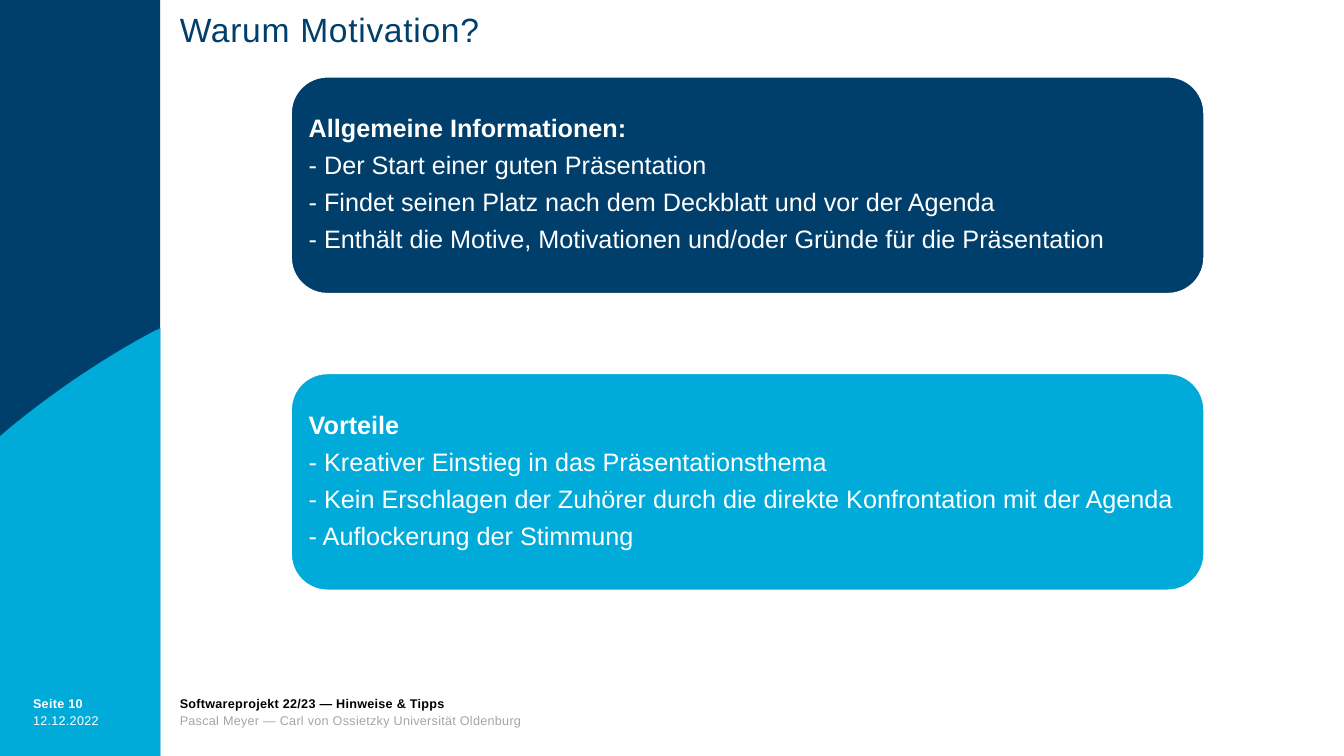
from pptx import Presentation
from pptx.dml.color import RGBColor
from pptx.enum.shapes import MSO_SHAPE
from pptx.enum.text import MSO_ANCHOR, PP_ALIGN
from pptx.util import Pt

RECTANGLE = MSO_SHAPE.RECTANGLE
ROUNDED = MSO_SHAPE.ROUNDED_RECTANGLE
TOP, MIDDLE = MSO_ANCHOR.TOP, MSO_ANCHOR.MIDDLE
LEFT = PP_ALIGN.LEFT

WIDTH, HEIGHT = 960, 540
SIDEBAR_WIDTH = 114.5
NAVY, CYAN, WHITE, BLACK, GREY = "003F6B", "00ABDA", "FFFFFF", "000000", "A5A5A5"

CARDS = [
    (54.9, NAVY, "Allgemeine Informationen:", [
        "- Der Start einer guten Präsentation",
        "- Findet seinen Platz nach dem Deckblatt und vor der Agenda",
        "- Enthält die Motive, Motivationen und/oder Gründe für die Präsentation",
    ]),
    (266.8, CYAN, "Vorteile", [
        "- Kreativer Einstieg in das Präsentationsthema",
        "- Kein Erschlagen der Zuhörer durch die direkte Konfrontation mit der Agenda",
        "- Auflockerung der Stimmung",
    ]),
]


def color(value):
    return RGBColor.from_string(value)


def style_shape(shape, fill, line=None):
    shape.shadow.inherit = False
    shape.fill.solid()
    shape.fill.fore_color.rgb = color(fill)
    if line:
        shape.line.color.rgb = color(line)
        shape.line.width = Pt(1)
    else:
        shape.line.fill.background()


def add_box(slide, kind, left, top, width, height, fill, line=None):
    shape = slide.shapes.add_shape(kind, Pt(left), Pt(top), Pt(width), Pt(height))
    style_shape(shape, fill, line)
    return shape


def set_frame(frame, inset=0, anchor=TOP, wrap=True):
    frame.margin_left = frame.margin_right = Pt(inset)
    frame.margin_top = frame.margin_bottom = Pt(inset)
    frame.vertical_anchor = anchor
    frame.word_wrap = wrap


def write(frame, text, size, fill, bold=False, line_spacing=0.9, after=0, tracking=0):
    """Add one paragraph, using the empty first one if there is no text yet."""
    paragraph = frame.add_paragraph() if frame.text else frame.paragraphs[0]
    paragraph.alignment = LEFT
    paragraph.line_spacing = line_spacing
    paragraph.space_after = Pt(after)
    run = paragraph.add_run()
    run.text = text
    run.font.name = "Arial"
    run.font.size = Pt(size)
    run.font.bold = bold
    run.font.color.rgb = color(fill)
    if tracking:
        run.font._element.set("spc", str(round(tracking * 100)))


def add_text_box(slide, left, top, width, height, wrap=True):
    box = slide.shapes.add_textbox(Pt(left), Pt(top), Pt(width), Pt(height))
    set_frame(box.text_frame, wrap=wrap)
    return box.text_frame


def cubic_points(start, control_1, control_2, end, steps=24):
    points = []
    for step in range(steps + 1):
        t = step / steps
        weights = ((1 - t) ** 3, 3 * t * (1 - t) ** 2, 3 * t ** 2 * (1 - t), t ** 3)
        points.append(tuple(
            sum(weight * value for weight, value in zip(weights, values))
            for values in zip(start, control_1, control_2, end)))
    return points


def add_sidebar(slide):
    add_box(slide, RECTANGLE, 0, 0, SIDEBAR_WIDTH, HEIGHT, NAVY)
    curve = cubic_points((6.5, 306), (38.2, 280.1), (72, 257), (108, 237.6))
    outline = [(SIDEBAR_WIDTH, HEIGHT), (0, HEIGHT), (0, 311.6), *curve]
    builder = slide.shapes.build_freeform(Pt(SIDEBAR_WIDTH), Pt(234.4))
    builder.add_line_segments([(Pt(x), Pt(y)) for x, y in outline])
    style_shape(builder.convert_to_shape(), CYAN)


def add_footer(slide):
    small = {"size": 9, "line_spacing": Pt(12), "tracking": 0.2}
    page = add_text_box(slide, 23.6, 496.1, 82, 29, wrap=False)
    write(page, "Seite 10", fill=WHITE, bold=True, **small)
    write(page, "12.12.2022", fill=WHITE, **small)
    source = add_text_box(slide, 128.4, 496.1, 677.5, 29, wrap=False)
    write(source, "Softwareprojekt 22/23 — Hinweise & Tipps", fill=BLACK, bold=True, **small)
    write(source, "Pascal Meyer — Carl von Ossietzky Universität Oldenburg", fill=GREY, **small)


def add_card(slide, top, fill, heading, points):
    frame = add_box(slide, ROUNDED, 208, top, 652, 154.8, fill, line=WHITE).text_frame
    set_frame(frame, inset=5, anchor=MIDDLE)
    write(frame, heading, 18, WHITE, bold=True, after=7)
    for point in points:
        write(frame, point, 18, WHITE, after=7)


def main():
    presentation = Presentation()
    presentation.slide_width = Pt(WIDTH)
    presentation.slide_height = Pt(HEIGHT)
    slide = presentation.slides.add_slide(presentation.slide_layouts[6])
    add_sidebar(slide)
    add_footer(slide)
    title = add_text_box(slide, 128.4, 9.4, 677.5, 34.6)
    write(title, "Warum Motivation?", 24, NAVY, tracking=0.5)
    for card in CARDS:
        add_card(slide, *card)
    presentation.save("out.pptx")


if __name__ == "__main__":
    main()
